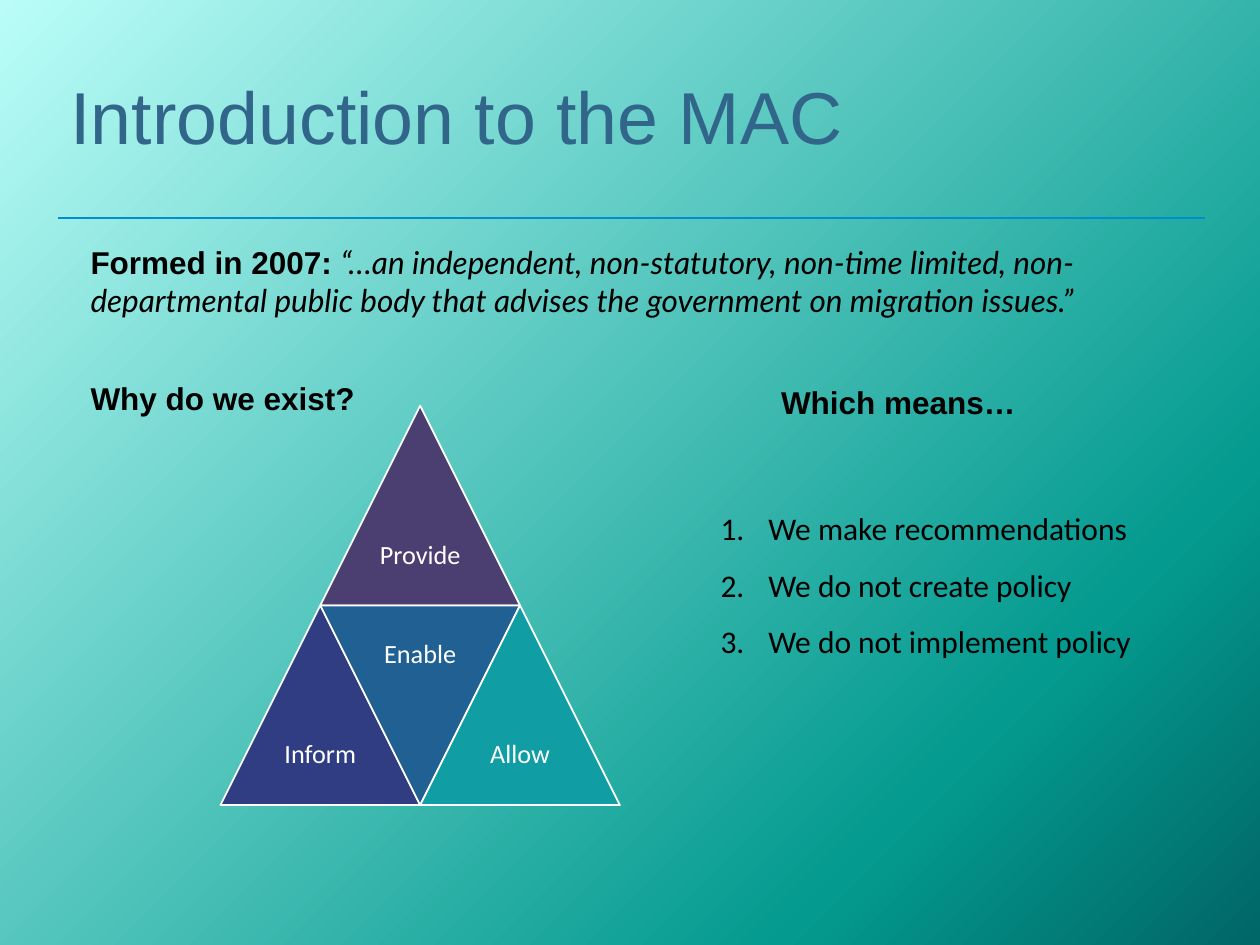
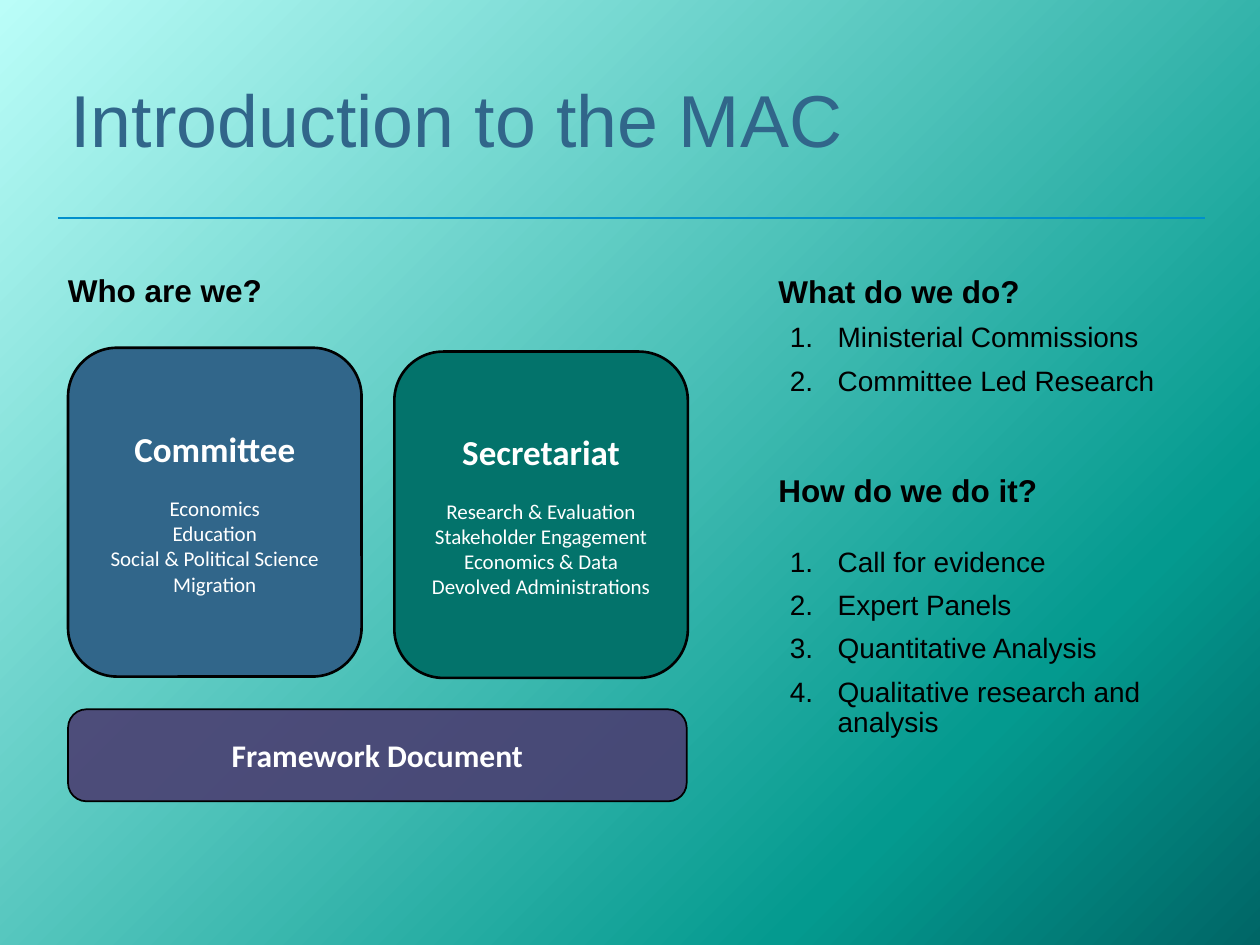
from lxml import etree
from pptx import Presentation
from pptx.dml.color import RGBColor
from pptx.enum.shapes import MSO_CONNECTOR, MSO_SHAPE
from pptx.enum.text import MSO_ANCHOR, MSO_AUTO_SIZE, PP_ALIGN
from pptx.oxml.ns import qn
from pptx.util import Inches, Pt

COLUMNS, ROWS = 100, 75
WIDTH, HEIGHT = Inches(10), Inches(7.5)
TITLE_ONLY = 5
TRIANGLE, ROUNDED = MSO_SHAPE.ISOSCELES_TRIANGLE, MSO_SHAPE.ROUNDED_RECTANGLE
TOP, MIDDLE, BOTTOM = MSO_ANCHOR.TOP, MSO_ANCHOR.MIDDLE, MSO_ANCHOR.BOTTOM
LEFT, CENTER = PP_ALIGN.LEFT, PP_ALIGN.CENTER

COLORS = {
    "title": "31668A", "rule": "008FCC", "black": "000000", "white": "FFFFFF",
    "purple": "4B3F72", "indigo": "303D82", "blue": "216093", "teal": "119DA4",
    "green": "03736B",
}
BACKGROUND_STOPS = [(0, "BAFDF8"), (78, "049A8F"), (100, "006666")]
HEADING_FONT, BODY_FONT, QUOTE_FONT = "Arial", "Calibri", "Lato"


def color(name):
    return RGBColor.from_string(COLORS[name])


def place(left, top, width, height):
    """Turn grid columns and rows into slide lengths."""
    return (int(left * WIDTH / COLUMNS), int(top * HEIGHT / ROWS),
            int(width * WIDTH / COLUMNS), int(height * HEIGHT / ROWS))


def style(font, size, name=BODY_FONT, ink="black", bold=False, italic=False):
    font.size, font.name = Pt(size), name
    font.bold, font.italic = bold, italic
    font.color.rgb = color(ink)


def style_master(master):
    fill = master.background.fill
    fill.gradient()
    fill.gradient_angle = 315
    stops = master.element.find(".//" + qn("a:gsLst"))
    for old_stop in list(stops):
        stops.remove(old_stop)
    for percent, value in BACKGROUND_STOPS:
        stop = etree.SubElement(stops, qn("a:gs"), pos=str(percent * 1000))
        etree.SubElement(stop, qn("a:srgbClr"), val=value)


def add_master_rule(slide, master):
    """Draw the line under the title and move it to the master."""
    left, top, width, _ = place(4.6, 17.3, 91, 0)
    rule = slide.shapes.add_connector(MSO_CONNECTOR.STRAIGHT, left, top, left + width, top)
    rule.line.color.rgb = color("rule")
    rule.line.width = Pt(1)
    etree.SubElement(rule.element.spPr, qn("a:effectLst"))
    master.element.cSld.spTree.append(rule.element)


def add_titled_slide(presentation, title_text, title_height):
    slide = presentation.slides.add_slide(presentation.slide_layouts[TITLE_ONLY])
    title = slide.shapes.title
    title.left, title.top, title.width, title.height = place(4.6, 4, 76.1, title_height)
    frame = title.text_frame
    frame.text = title_text
    frame.auto_size = MSO_AUTO_SIZE.NONE
    frame.vertical_anchor = MIDDLE
    paragraph = frame.paragraphs[0]
    paragraph.alignment, paragraph.line_spacing = LEFT, 0.9
    style(paragraph.runs[0].font, 42, HEADING_FONT, "title")
    return slide


def add_text(slide, area, lines, anchor=TOP):
    frame = slide.shapes.add_textbox(*place(*area)).text_frame
    frame.word_wrap = True
    frame.vertical_anchor = anchor
    frame.text = "\n".join(lines)
    return frame


def add_heading(slide, left, top, width, text):
    paragraph = add_text(slide, (left, top, width, 3.9), [text], BOTTOM).paragraphs[0]
    paragraph.line_spacing = 0.9
    style(paragraph.runs[0].font, 18, HEADING_FONT, bold=True)


def add_numbered_list(slide, area, items, size, font_name, line_spacing, gap):
    frame = add_text(slide, area, items)
    for index, paragraph in enumerate(frame.paragraphs):
        properties = paragraph._p.get_or_add_pPr()
        properties.set("marL", str(Inches(0.38)))
        properties.set("indent", str(-Inches(0.38)))
        etree.SubElement(properties, qn("a:buAutoNum"), type="arabicPeriod")
        paragraph.line_spacing = line_spacing
        if index:
            paragraph.space_before = Pt(gap)
        style(paragraph.font, size, font_name)
        style(paragraph.runs[0].font, size, font_name)


def add_quote(slide, area, lead, quote):
    paragraph = add_text(slide, area, [lead]).paragraphs[0]
    style(paragraph.runs[0].font, 18, HEADING_FONT, bold=True)
    run = paragraph.add_run()
    run.text = quote
    style(run.font, 18, QUOTE_FONT, italic=True)


def add_filled_shape(slide, kind, area, fill, line, line_width):
    shape = slide.shapes.add_shape(kind, *place(*area))
    shape.shadow.inherit = False
    shape.fill.solid()
    shape.fill.fore_color.rgb = color(fill)
    shape.line.color.rgb = color(line)
    shape.line.width = Pt(line_width)
    return shape


def add_pyramid(slide, left, top, side):
    """Stack four triangles, the middle one upside down, each with a label."""
    half = side / 2
    parts = [("Provide", "purple", half, 0, False), ("Inform", "indigo", 0, side, False),
             ("Enable", "blue", half, side, True), ("Allow", "teal", side, side, False)]
    for label, fill, across, down, inverted in parts:
        x, y = left + across, top + down
        triangle = add_filled_shape(slide, TRIANGLE, (x, y, side, side), fill, "white", 1)
        triangle.rotation = 180 if inverted else 0
        label_top = y if inverted else y + half
        frame = add_text(slide, (x + side / 4, label_top, half, half), [label], MIDDLE)
        frame.word_wrap = False
        frame.margin_left = frame.margin_right = Inches(0.06)
        frame.margin_top = frame.margin_bottom = Inches(0.06)
        paragraph = frame.paragraphs[0]
        paragraph.alignment, paragraph.line_spacing = CENTER, 0.9
        style(paragraph.runs[0].font, 15, ink="white")


def add_card(slide, area, fill, heading, heading_size, details=(), line_width=1.5):
    card = add_filled_shape(slide, ROUNDED, area, fill, "black", line_width)
    frame = card.text_frame
    frame.text = "\n".join([heading, *details])
    frame.vertical_anchor = MIDDLE
    for index, paragraph in enumerate(frame.paragraphs):
        paragraph.alignment = CENTER
        if index == 1:
            paragraph.space_before = Pt(14.6)
        style(paragraph.runs[0].font, 12 if index else heading_size, ink="white", bold=not index)
    return card


def add_framework_bar(slide):
    bar = add_card(slide, (5.4, 56.3, 49.1, 7.3), "purple", "Framework Document", 18,
                   line_width=1)
    bar.adjustments[0] = 0.2
    fill_color = bar.element.spPr.find(qn("a:solidFill"))[0]
    etree.SubElement(fill_color, qn("a:alpha"), val="90000")


def build_purpose_slide(presentation):
    slide = add_titled_slide(presentation, "Introduction to the MAC", 11.1)
    add_master_rule(slide, presentation.slide_master)
    add_heading(slide, 6.2, 29.7, 31.8, "Why do we exist?")
    add_heading(slide, 61, 30, 22.1, "Which means…")
    add_pyramid(slide, 17.5, 32.2, 15.85)
    add_numbered_list(slide, (56.2, 38.4, 35.2, 14.2),
                      ["We make recommendations", "We do not create policy",
                       "We do not implement policy"], 18, BODY_FONT, 1.5, 0)
    add_quote(slide, (6.2, 18.8, 85.2, 7.1), "Formed in 2007: ",
              "“…an independent, non-statutory, non-time limited, non-departmental "
              "public body that advises the government on migration issues.”")


def build_structure_slide(presentation):
    slide = add_titled_slide(presentation, "Introduction to the MAC", 11.6)
    add_heading(slide, 4.4, 21.1, 50, "Who are we?")
    add_heading(slide, 60.8, 21.2, 30.8, "What do we do?")
    add_numbered_list(slide, (61.7, 25.2, 33.9, 8.9),
                      ["Ministerial Commissions", "Committee Led Research"],
                      16, HEADING_FONT, 0.9, 7.5)
    add_heading(slide, 60.8, 37, 27, "How do we do it?")
    add_numbered_list(slide, (61.7, 43, 33.9, 25.9),
                      ["Call for evidence", "Expert Panels", "Quantitative Analysis",
                       "Qualitative research and analysis"], 16, HEADING_FONT, 0.9, 7.5)
    add_framework_bar(slide)
    add_card(slide, (5.4, 27.6, 23.3, 26.1), "title", "Committee", 20,
             ["Economics", "Education", "Social & Political Science", "Migration"])
    add_card(slide, (31.3, 27.9, 23.3, 25.9), "green", "Secretariat", 20,
             ["Research & Evaluation", "Stakeholder Engagement", "Economics & Data",
              "Devolved Administrations"])


def main():
    presentation = Presentation()
    presentation.slide_width, presentation.slide_height = WIDTH, HEIGHT
    style_master(presentation.slide_master)
    build_purpose_slide(presentation)
    build_structure_slide(presentation)
    presentation.save("out.pptx")


if __name__ == "__main__":
    main()
